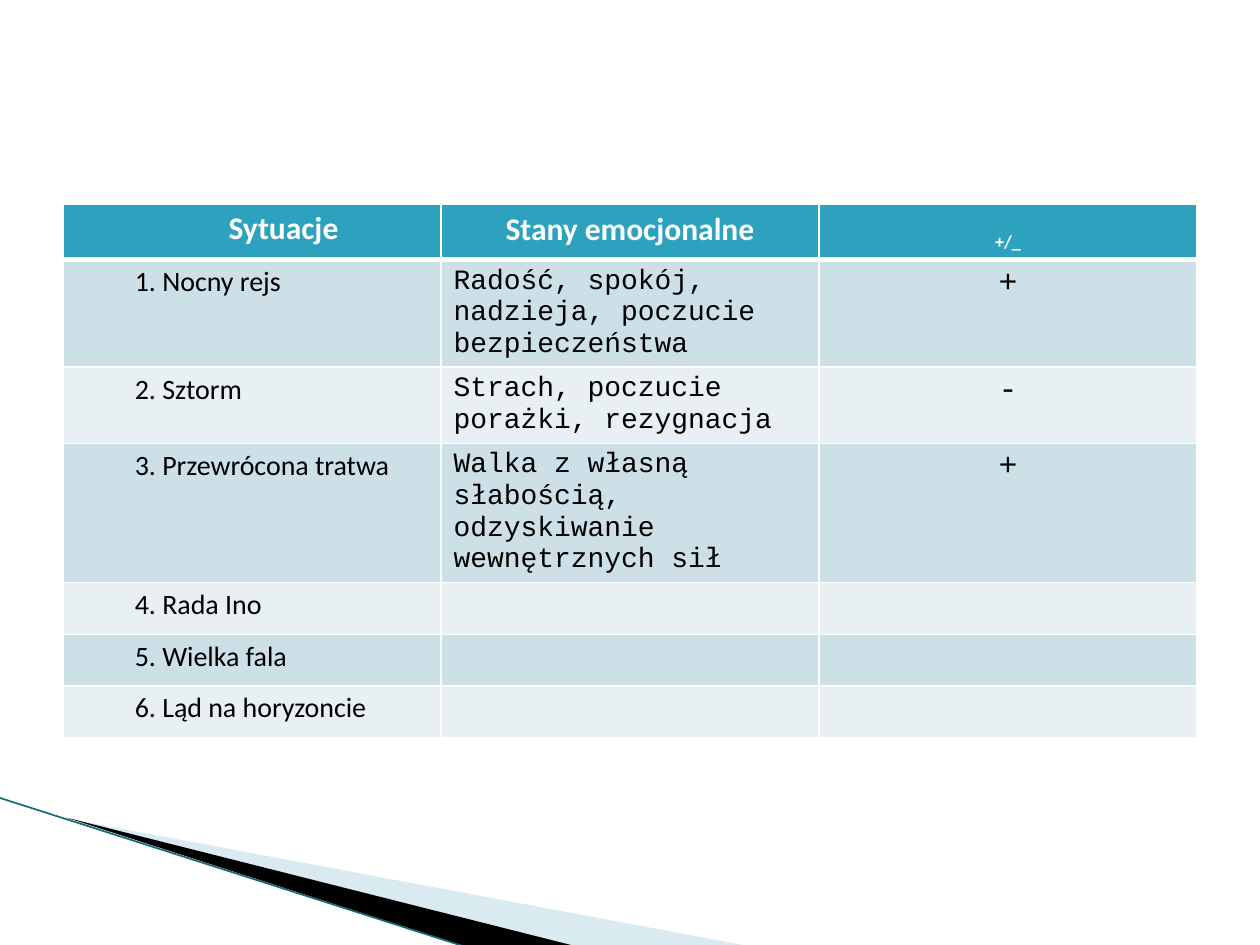
from lxml import etree
from pptx import Presentation
from pptx.dml.color import RGBColor
from pptx.enum.shapes import MSO_CONNECTOR as CONN
from pptx.enum.text import PP_ALIGN as AL
from pptx.oxml.ns import qn
from pptx.util import Inches, Pt

WHITE = RGBColor(0xFF, 0xFF, 0xFF)
BLACK = RGBColor(0, 0, 0)
TEAL = RGBColor(0x2D, 0xA2, 0xBF)
DARK_TEAL = RGBColor(0x17, 0x68, 0x7B)
PALE_BLUE = RGBColor(0xA0, 0xCB, 0xDC)
BANDS = (RGBColor(0xE8, 0xF0, 0xF4), RGBColor(0xCD, 0xE0, 0xE8))
SANS, MONO = "Calibri", "Courier New"

ROWS = [
    ("Sytuacje", "Stany emocjonalne", "+/_"),
    ("1. Nocny rejs", "Radość, spokój, nadzieja, poczucie bezpieczeństwa", "+"),
    ("2. Sztorm", "Strach, poczucie porażki, rezygnacja", "-"),
    ("3. Przewrócona tratwa",
     "Walka z własną słabością, odzyskiwanie wewnętrznych sił", "+"),
    ("4. Rada Ino", "", ""),
    ("5. Wielka fala", "", ""),
    ("6. Ląd na horyzoncie", "", ""),
]


def add_wedge(slide, points, color, alpha=None):
    """Draw a filled outline through points given in inches."""
    start, *rest = [(Inches(x), Inches(y)) for x, y in points]
    fb = slide.shapes.build_freeform(*start, scale=1.0)
    fb.add_line_segments(rest, close=True)
    sp = fb.convert_to_shape()
    sp.shadow.inherit = False
    sp.fill.solid()
    sp.fill.fore_color.rgb = color
    sp.line.fill.background()
    if alpha:
        clr = sp._element.spPr.find(qn("a:solidFill"))[0]
        etree.SubElement(clr, qn("a:alpha")).set("val", str(alpha * 1000))


def add_corner(slide):
    """Draw the slanted wedges and edge line in the bottom left corner."""
    add_wedge(slide, [(0.55, 6.5), (5.95, 7.51), (4.56, 7.51)], PALE_BLUE, 40)
    add_wedge(slide, [(0.53, 6.49), (4.57, 7.51), (3.72, 7.52)], BLACK)
    edge = slide.shapes.add_connector(
        CONN.STRAIGHT, Inches(-0.01), Inches(6.33), Inches(3.71), Inches(7.52))
    edge.line.color.rgb = DARK_TEAL
    edge.line.width = Pt(0.95)
    etree.SubElement(edge._element.spPr, qn("a:effectLst"))


def set_borders(cell, bottom):
    """Give a cell white borders, with its own bottom width in points."""
    tc_pr = cell._tc.get_or_add_tcPr()
    for tag, width in (("lnL", 1), ("lnR", 1), ("lnT", 1), ("lnB", bottom)):
        ln = etree.SubElement(tc_pr, qn(f"a:{tag}"), w=str(Pt(width)))
        fill = etree.SubElement(ln, qn("a:solidFill"))
        etree.SubElement(fill, qn("a:srgbClr"), val=str(WHITE))


def format_cell(cell, text, row, col):
    """Fill one table cell and format it by its row and column."""
    header = row == 0
    set_borders(cell, 3 if header else 1)
    cell.fill.solid()
    cell.fill.fore_color.rgb = TEAL if header else BANDS[row % 2]
    cell.text_frame.text = text
    p = cell.text_frame.paragraphs[0]
    if header or col == 2:
        p.alignment = AL.CENTER
    if col == 0:
        cell.margin_left = cell.margin_right = Inches(0.07)
        cell.margin_top = cell.margin_bottom = 0
        p.line_spacing = 1.15
        p._p.get_or_add_pPr().set("marL", str(Inches(0.5)))
    for r in p.runs:
        r.font.name = SANS if header or col == 0 else MONO
        r.font.size = Pt(18 if header or col == 2 else 16)
        r.font.bold = header
        r.font.color.rgb = WHITE if header else BLACK
        if header and col == 2:
            r._r.get_or_add_rPr().set("baseline", "-25000")


def add_situations(slide, left, top, width, row_height):
    """Place the table of situations and emotional states."""
    n_rows, n_cols = len(ROWS), len(ROWS[0])
    table = slide.shapes.add_table(
        n_rows, n_cols, left, top, width, row_height * n_rows).table
    for i, texts in enumerate(ROWS):
        table.rows[i].height = row_height
        for j, text in enumerate(texts):
            format_cell(table.cell(i, j), text, i, j)


def main():
    """Build and save the slide."""
    prs = Presentation()
    prs.slide_width, prs.slide_height = Inches(10), Inches(7.5)
    slide = prs.slides.add_slide(prs.slide_layouts[6])
    add_corner(slide)
    add_situations(slide, Inches(0.5), Inches(1.62), Inches(9), Inches(0.41))
    prs.save("out.pptx")


if __name__ == "__main__":
    main()
